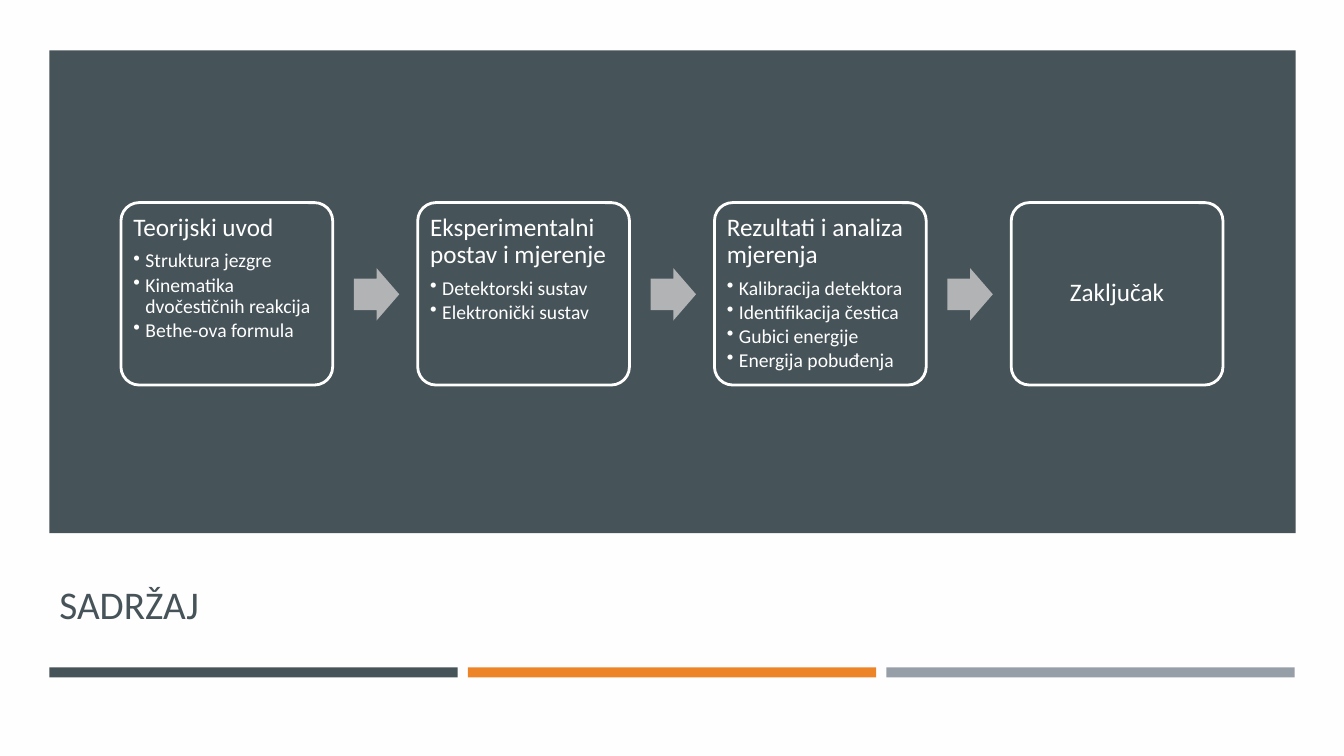
import pptx
import pptx.util
import pptx.dml.color
import pptx.enum.shapes
import pptx.enum.text
import pptx.oxml.ns
import lxml.etree

Inches = pptx.util.Inches
Pt = pptx.util.Pt
Shape = pptx.enum.shapes.MSO_SHAPE
Anchor = pptx.enum.text.MSO_ANCHOR
Align = pptx.enum.text.PP_ALIGN

COLORS = {
    "paper": "FFFEFF",
    "slate": "465359",
    "orange": "ED8428",
    "gray": "969FA7",
    "arrow": "B1B3B5",
    "white": "FFFFFF",
}

STEPS = [
    ("Teorijski uvod",
     ["Struktura jezgre", "Kinematika dvočestičnih reakcija", "Bethe-ova formula"]),
    ("Eksperimentalni postav i mjerenje",
     ["Detektorski sustav", "Elektronički sustav"]),
    ("Rezultati i analiza mjerenja",
     ["Kalibracija detektora", "Identifikacija čestica", "Gubici energije",
      "Energija pobuđenja"]),
    ("Zaključak", []),
]


def apply(target, values):
    for name, value in values.items():
        setattr(target, name, value)


def rgb(name):
    return pptx.dml.color.RGBColor.from_string(COLORS[name])


class SlideBuilder:
    font = "Calibri"
    heading = {"line_spacing": 0.9, "space_after": Pt(6.3)}
    bullet = {"line_spacing": 0.9, "space_after": Pt(2.1), "level": 1}

    def __init__(self, page):
        self.page = page

    def shape(self, kind, area, fill, adjustments=()):
        box = self.page.shapes.add_shape(kind, *map(Inches, area))
        box.shadow.inherit = False
        box.fill.solid()
        box.fill.fore_color.rgb = rgb(fill)
        box.line.fill.background()
        for index, value in enumerate(adjustments):
            box.adjustments[index] = value
        return box

    def span(self, para, text, size, color):
        span = para.add_run()
        span.text = text
        apply(span.font, {"name": self.font, "size": Pt(size)})
        span.font.color.rgb = rgb(color)

    def title(self, area, text):
        box = self.page.shapes.add_textbox(*map(Inches, area))
        apply(box.text_frame, {"word_wrap": True, "vertical_anchor": Anchor.MIDDLE})
        self.span(box.text_frame.paragraphs[0], text, 28, "slate")

    def add_bullet(self, para):
        properties = para._p.get_or_add_pPr()
        indent = Inches(0.12)
        properties.set("marL", str(indent))
        properties.set("indent", str(-indent))
        mark = lxml.etree.SubElement(properties, pptx.oxml.ns.qn("a:buChar"))
        mark.set("char", "•")

    def step(self, area, heading, bullets):
        box = self.shape(Shape.ROUNDED_RECTANGLE, area, "slate", [0.1])
        box.line.color.rgb = rgb("white")
        box.line.width = Pt(2)
        frame = box.text_frame
        inset = Inches(0.07)
        apply(frame, {
            "word_wrap": True,
            "vertical_anchor": Anchor.TOP if bullets else Anchor.MIDDLE,
            "margin_left": inset, "margin_right": inset,
            "margin_top": inset, "margin_bottom": inset,
        })
        para = frame.paragraphs[0]
        apply(para, self.heading)
        para.alignment = Align.LEFT if bullets else Align.CENTER
        self.span(para, heading, 18, "white")
        for text in bullets:
            para = frame.add_paragraph()
            apply(para, self.bullet)
            para.alignment = Align.LEFT
            self.add_bullet(para)
            self.span(para, text, 14, "white")


def main():
    deck = pptx.Presentation()
    apply(deck, {"slide_width": Inches(13.33), "slide_height": Inches(7.5)})
    builder = SlideBuilder(deck.slides.add_slide(deck.slide_layouts[6]))

    # Background, title and main panel
    builder.shape(Shape.RECTANGLE, (0, 0, 13.33, 7.5), "paper")
    builder.title((0.49, 5.47, 12.35, 1.04), "SADRŽAJ")
    builder.shape(Shape.RECTANGLE, (0.49, 0.5, 12.36, 4.79), "slate")

    # Three colour bars under the title
    for index, color in enumerate(("slate", "orange", "gray")):
        builder.shape(Shape.RECTANGLE, (0.49 + 4.15 * index, 6.62, 4.05, 0.1), color)

    # Steps of the talk, with an arrow between neighbours
    first_left, last_left = 1.2, 10.03
    pitch = (last_left - first_left) / (len(STEPS) - 1)
    for index, (heading, bullets) in enumerate(STEPS):
        left = first_left + pitch * index
        builder.step((left, 2.01, 2.1, 1.81), heading, bullets)
        if index < len(STEPS) - 1:
            builder.shape(Shape.RIGHT_ARROW, (left + 2.31, 2.66, 0.45, 0.52),
                          "arrow", [0.6, 0.5])

    deck.save("out.pptx")


if __name__ == "__main__":
    main()
